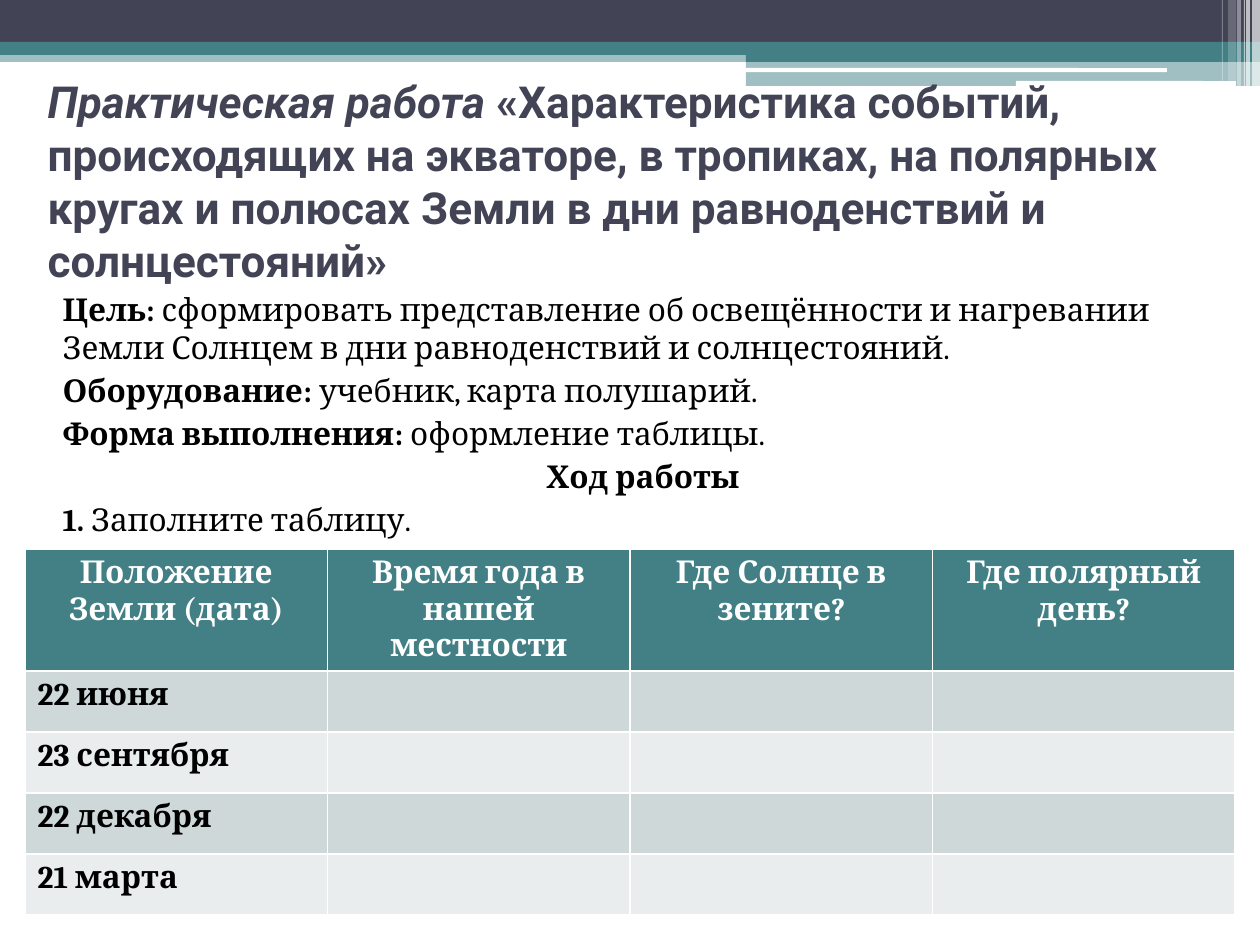
from lxml import etree
from pptx import Presentation
from pptx.dml.color import RGBColor
from pptx.enum.shapes import MSO_SHAPE
from pptx.enum.text import MSO_ANCHOR, MSO_AUTO_SIZE, PP_ALIGN
from pptx.oxml.ns import qn
from pptx.util import Emu, Pt

RECT, ROUND = MSO_SHAPE.RECTANGLE, MSO_SHAPE.ROUNDED_RECTANGLE
LEFT, CENTER = PP_ALIGN.LEFT, PP_ALIGN.CENTER
PX = 914400 / 126  # EMU per px
COLORS = {
    "dark": "424456", "teal": "438086", "white": "FFFFFF", "black": "000000",
    "band_dark": "CFD8D9", "band_light": "E9EDED",
}


def px(*lengths):
    return [Emu(round(length * PX)) for length in lengths]


def add_run(paragraph, text, color, **font_format):
    run = paragraph.add_run()
    run.text = text
    run.font.color.rgb = RGBColor.from_string(COLORS[color])
    for name, value in font_format.items():
        setattr(run.font, name, value)


prs = Presentation()
prs.slide_width, prs.slide_height = px(1260, 945)
slide = prs.slides.add_slide(prs.slide_layouts[1])
title, body = slide.placeholders

# Header bands and stripes: kind, left, top, width, height, colour, opacity %
bands = [
    (RECT, 0, 50, 1260, 12, "teal", 50),
    (RECT, 0, 0, 1260, 43, "dark", 100),
    (RECT, 0, 42, 1260, 13, "teal", 100),
    (RECT, 746, 49, 514, 13, "teal", 100),
    (RECT, 746, 61, 514, 25, "teal", 50),
    (ROUND, 745, 68, 422, 4, "white", 100),
    (ROUND, 1016, 81, 220, 5, "white", 100),
    (RECT, 1252, 0, 8, 86, "white", 65),
    (RECT, 1246, 0, 4, 86, "white", 65),
    (RECT, 1244, 0, 1, 86, "white", 60),
    (RECT, 1237, 0, 4, 86, "white", 40),
    (RECT, 1228, 0, 8, 81, "white", 20),
    (RECT, 1222, 0, 1, 81, "white", 30),
]
for kind, left, top, width, height, color, opacity in bands:
    band = slide.shapes.add_shape(kind, *px(left, top, width, height))
    band.shadow.inherit = False
    band.line.fill.background()
    band.fill.solid()
    band.fill.fore_color.rgb = RGBColor.from_string(COLORS[color])
    if opacity < 100:
        tint = band.element.spPr.find(qn("a:solidFill"))[0]
        etree.SubElement(tint, qn("a:alpha"), val=str(opacity * 1000))

# Title and body stand in front of the bands
for holder, top, height, anchor in [
    (title, 66, 229, MSO_ANCHOR.MIDDLE),
    (body, 284, 268, MSO_ANCHOR.TOP),
]:
    holder.element.getparent().append(holder.element)
    holder.left, holder.top, holder.width, holder.height = px(35, top, 1201, height)
    holder.text_frame.word_wrap = True
    holder.text_frame.auto_size = MSO_AUTO_SIZE.NONE
    holder.text_frame.vertical_anchor = anchor

# Title
heading = title.text_frame.paragraphs[0]
heading.alignment = LEFT
heading_format = {"name": "Roboto", "size": Pt(25.2), "bold": True}
add_run(heading, "Практическая работа ", "dark", italic=True, **heading_format)
add_run(heading, "«Характеристика событий, происходящих на экваторе, в тропиках, "
        "на полярных кругах и полюсах Земли в дни равноденствий и солнцестояний»",
        "dark", italic=False, **heading_format)

# Task description: bold label, plain text, alignment
serif = {"name": "Cambria", "size": Pt(18)}
tasks = [
    ("Цель: ", "сформировать представление об освещённости и нагревании "
     "Земли Солнцем в дни равноденствий и солнцестояний.", LEFT),
    ("Оборудование: ", "учебник, карта полушарий.", LEFT),
    ("Форма выполнения: ", "оформление таблицы.", LEFT),
    ("Ход работы", "", CENTER),
    ("1. ", "Заполните таблицу.", LEFT),
]
for index, (label, text, alignment) in enumerate(tasks):
    task = body.text_frame.paragraphs[0] if index == 0 else body.text_frame.add_paragraph()
    task.alignment = alignment
    task.space_before = Pt(3)
    properties = task._p.get_or_add_pPr()
    properties.set("marL", str(px(15)[0]))
    properties.set("indent", "0")
    etree.SubElement(properties, qn("a:buNone"))
    add_run(task, label, "black", bold=True, **serif)
    if text:
        add_run(task, text, "black", bold=False, **serif)

# Table to fill in
headers = ["Положение Земли (дата)", "Время года в нашей местности",
           "Где Солнце в зените?", "Где полярный день?"]
dates = ["22 июня", "23 сентября", "22 декабря", "21 марта"]
rows = [headers] + [[date, "", "", ""] for date in dates]
table = slide.shapes.add_table(len(rows), len(headers), *px(25, 549, 1210, 366)).table
for row_index, texts in enumerate(rows):
    is_header = row_index == 0
    table.rows[row_index].height = px(122 if is_header else 61)[0]
    if is_header:
        fill = "teal"
    else:
        fill = "band_dark" if row_index % 2 else "band_light"
    for column, text in enumerate(texts):
        cell = table.cell(row_index, column)
        cell.fill.solid()
        cell.fill.fore_color.rgb = RGBColor.from_string(COLORS[fill])
        if text:
            entry = cell.text_frame.paragraphs[0]
            entry.alignment = CENTER if is_header else LEFT
            add_run(entry, text, "white" if is_header else "black", bold=True, **serif)

prs.save("out.pptx")
